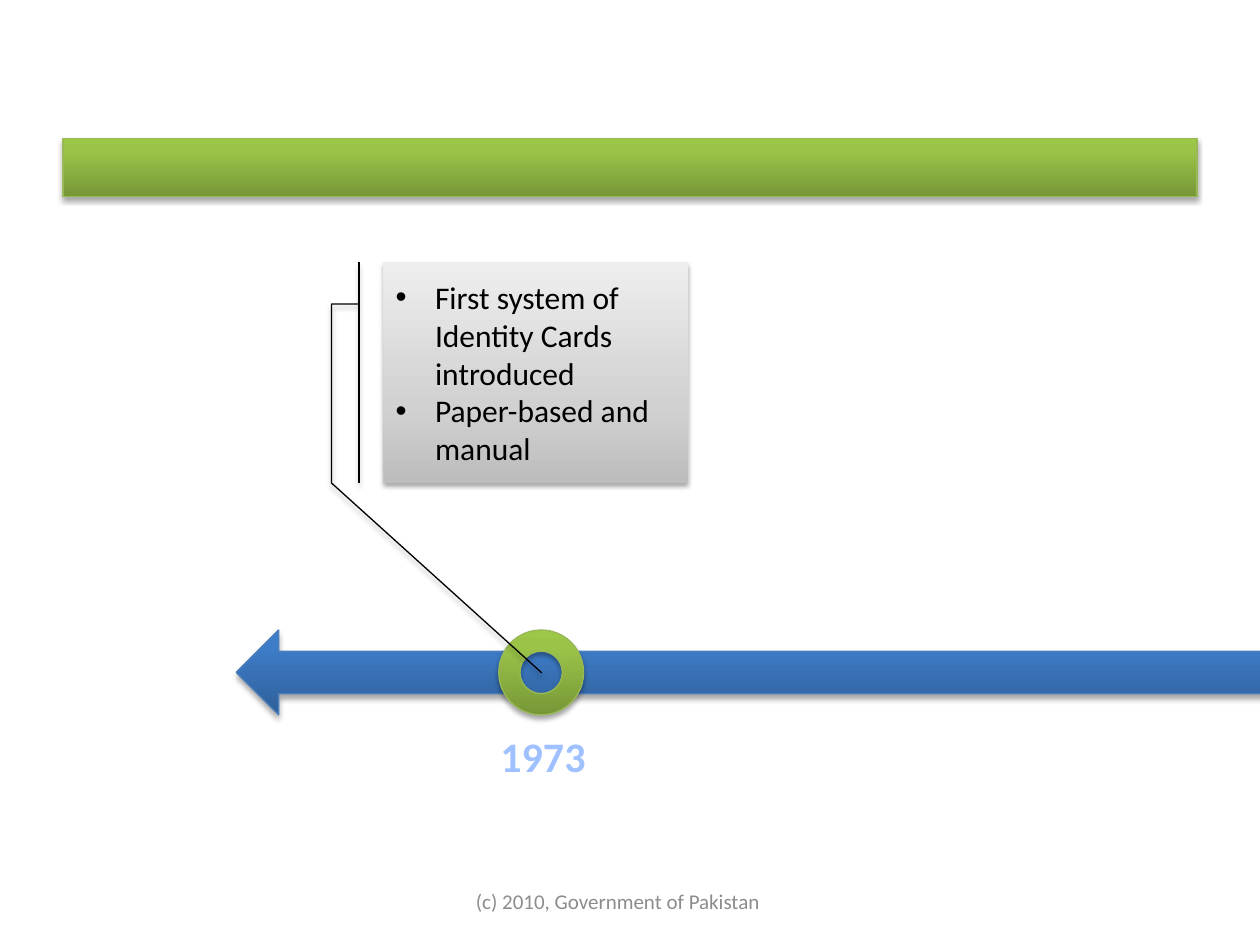
from dataclasses import dataclass
from typing import Any

from lxml import etree
from pptx import Presentation
from pptx import util as u
from pptx.dml.color import RGBColor
from pptx.enum import shapes, text
from pptx.oxml.ns import qn

Stops = tuple[tuple[int, str], ...]
Box = tuple[float, float, float, float]
KIND = shapes.MSO_SHAPE


@dataclass(frozen=True)
class Theme:
    font: str = "Calibri"
    green: Stops = ((0, "779737"), (80, "9BC348"), (100, "9DC746"))
    blue: Stops = ((0, "2F5F99"), (80, "3D7CC7"), (100, "3A7CCB"))
    gray: Stops = ((0, "BDBDBD"), (35, "D1D1D1"), (100, "EEEEEE"))
    leaf: str = "98B955"
    sea: str = "4B7EBC"
    ink: str = "000000"
    year: str = "A0C1FF"
    foot: str = "8C8C8C"
    list_size: int = 18
    year_size: int = 24
    foot_size: int = 12


@dataclass(frozen=True)
class Part:
    kind: Any
    box: Box
    fill: Stops
    line: str
    adj: tuple[float, ...] = ()
    items: tuple[str, ...] = ()


@dataclass(frozen=True)
class Label:
    words: str
    box: Box
    size: int
    color: str
    frame: dict[str, Any]
    bold: bool = False


LOOK = Theme()
BAND: Box = (36, 79.2, 648, 33.2)
ARROW: Box = (135, 360, 615, 48.5)
RING: Box = (285, 360, 48.5, 48.5)
NOTE: Box = (219, 149.8, 174.2, 126.2)
# Pairs of y and x, as shares of the note's height and width
LEAD = (0.19, -0.08, 0.19, -0.17, 1, -0.17, 1.86, 0.52)

PARTS = (
    Part(KIND.RECTANGLE, BAND, LOOK.green, LOOK.leaf),
    Part(KIND.LEFT_RIGHT_ARROW, ARROW, LOOK.blue, LOOK.sea),
    Part(KIND.DONUT, RING, LOOK.green, LOOK.leaf),
    Part(KIND.LINE_CALLOUT_3_ACCENT_BAR, NOTE, LOOK.gray, LOOK.ink, LEAD,
         ("First system of Identity Cards introduced",
          "Paper-based and manual")),
)
LABELS = (
    Label("(c) 2010, Government of Pakistan", (239, 500.4, 228.2, 28.8),
          LOOK.foot_size, LOOK.foot,
          {"word_wrap": True, "vertical_anchor": text.MSO_ANCHOR.MIDDLE}),
    Label("1973", (278.6, 414, 63.4, 36), LOOK.year_size, LOOK.year,
          {"word_wrap": False,
           "auto_size": text.MSO_AUTO_SIZE.SHAPE_TO_FIT_TEXT}, True),
)


def apply(item: Any, form: dict[str, Any]) -> None:
    for name, value in form.items():
        setattr(item, name, value)


def node(root: Any, tag: str, **attrs: Any) -> Any:
    return etree.SubElement(root, qn(tag), {k: str(v) for k, v in attrs.items()})


def shade(shape: Any, stops: Stops) -> None:
    """Fill from bottom to top with any number of colour stops."""
    shape.fill.gradient()
    shape.fill.gradient_angle = 90
    group = shape.element.spPr.find(qn("a:gradFill")).find(qn("a:gsLst"))
    for old in list(group):
        group.remove(old)
    for share, color in stops:
        node(node(group, "a:gs", pos=share * 1000), "a:srgbClr", val=color)


def cast(shape: Any) -> None:
    """Give the shape a soft shadow straight below it."""
    shape.shadow.inherit = False
    group = shape.element.spPr.find(qn("a:effectLst"))
    drop = node(group, "a:outerShdw", blurRad=u.Pt(3.1), dist=u.Pt(1.8),
                dir=5400000, rotWithShape=0)
    node(node(drop, "a:srgbClr", val=LOOK.ink), "a:alpha", val=35000)


def write(para: Any, words: str, size: int, color: str, bold: bool = False) -> None:
    run = para.add_run()
    run.text = words
    apply(run.font, {"name": LOOK.font, "size": u.Pt(size), "bold": bold})
    run.font.color.rgb = RGBColor.from_string(color)


def fill_list(frame: Any, items: tuple[str, ...]) -> None:
    apply(frame, {"word_wrap": True, "vertical_anchor": text.MSO_ANCHOR.MIDDLE})
    for i, words in enumerate(items):
        para = frame.add_paragraph() if i else frame.paragraphs[0]
        para.alignment = text.PP_ALIGN.LEFT
        props = para._p.get_or_add_pPr()
        props.set("marL", str(u.Pt(22.5)))
        props.set("indent", str(u.Pt(-22.5)))
        node(props, "a:buFont", typeface="Arial")
        node(props, "a:buChar", char="•")
        write(para, words, LOOK.list_size, LOOK.ink)


def draw_part(slide: Any, part: Part) -> None:
    shape = slide.shapes.add_shape(part.kind, *map(u.Pt, part.box))
    for i, value in enumerate(part.adj):
        shape.adjustments[i] = value
    shade(shape, part.fill)
    shape.line.color.rgb = RGBColor.from_string(part.line)
    shape.line.width = u.Pt(0.75)
    cast(shape)
    if part.items:
        fill_list(shape.text_frame, part.items)


def draw_label(slide: Any, label: Label) -> None:
    frame = slide.shapes.add_textbox(*map(u.Pt, label.box)).text_frame
    apply(frame, label.frame)
    para = frame.paragraphs[0]
    para.alignment = text.PP_ALIGN.CENTER
    write(para, label.words, label.size, label.color, label.bold)


def main() -> None:
    deck = Presentation()
    apply(deck, {"slide_width": u.Pt(720), "slide_height": u.Pt(540)})
    slide = deck.slides.add_slide(deck.slide_layouts[6])
    for part in PARTS:
        draw_part(slide, part)
    for label in LABELS:
        draw_label(slide, label)
    deck.save("out.pptx")


if __name__ == "__main__":
    main()
